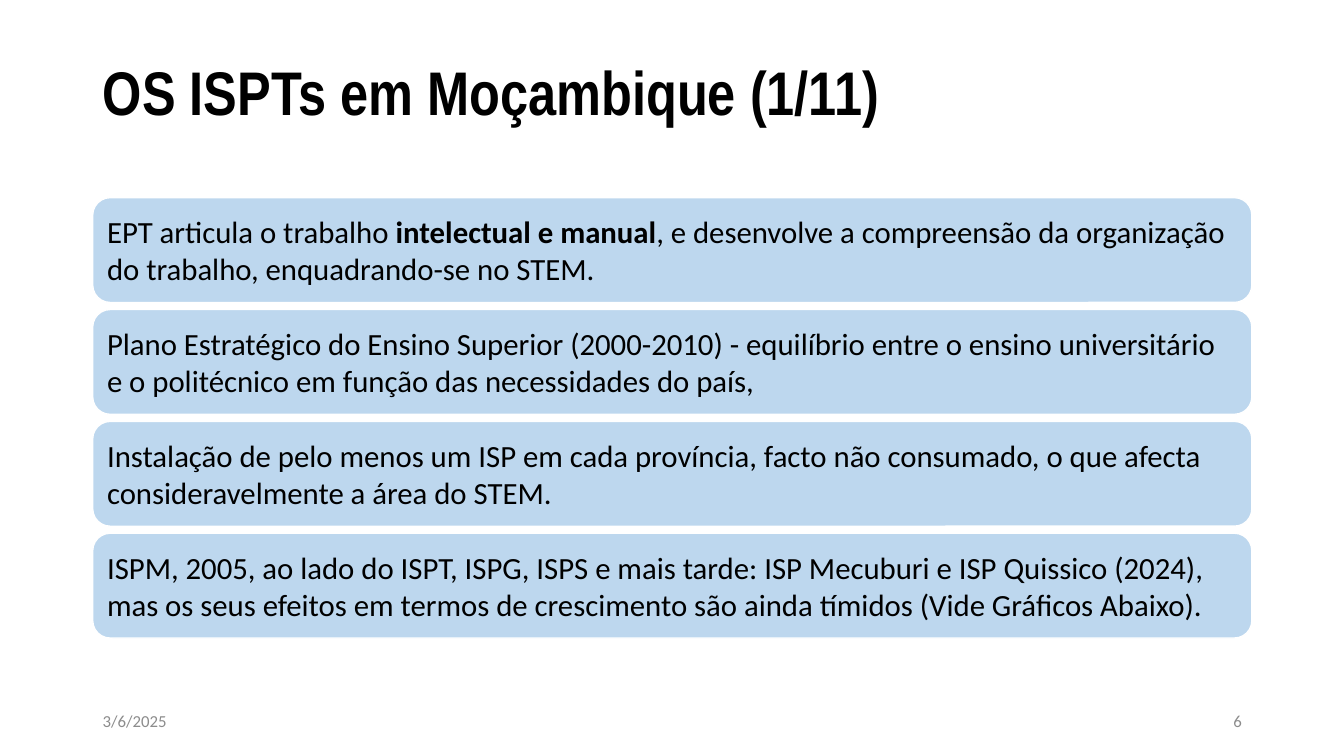
from pptx import Presentation
from pptx.dml.color import RGBColor
from pptx.enum.shapes import MSO_SHAPE as Shape
from pptx.enum.text import MSO_ANCHOR as Anchor, MSO_AUTO_SIZE as AutoSize, PP_ALIGN as Align
from pptx.util import Pt

LEFT, WIDTH = 66.25, 828
CARD_TOP, CARD_HEIGHT, CARD_PITCH = 141.2, 74.9, 79.9
FOOTER_TOP, FOOTER_WIDTH, FOOTER_HEIGHT = 500.5, 216, 28.75
CARDS = [
    [("EPT articula o trabalho ", False), ("intelectual e manual", True),
     (", e desenvolve a compreensão da organização do trabalho, enquadrando-se no STEM.", False)],
    [("Plano Estratégico do Ensino Superior (2000-2010) - equilíbrio entre o ensino "
      "universitário e o politécnico em função das necessidades do país,", False)],
    [("Instalação de pelo menos um ISP em cada província, facto não consumado, o que afecta "
      "consideravelmente a área do STEM.", False)],
    [("ISPM, 2005, ao lado do ISPT, ISPG, ISPS e mais tarde: ISP Mecuburi e ISP Quissico (2024), "
      "mas os seus efeitos em termos de crescimento são ainda tímidos (Vide Gráficos Abaixo).", False)],
]


def color(value):
    """Return the colour for a hex string."""
    return RGBColor.from_string(value)


def format_run(run, size, ink="000000", name="Calibri", bold=False):
    """Set the font of a run."""
    font = run.font
    font.name, font.size, font.bold = name, Pt(size), bold
    font.color.rgb = color(ink)


def add_title(slide, text):
    """Fill and place the title placeholder."""
    title = slide.shapes.title
    title.left, title.top, title.width, title.height = Pt(LEFT), Pt(28.75), Pt(WIDTH), Pt(78.5)
    frame = title.text_frame
    frame.text = text
    frame.auto_size = AutoSize.NONE
    frame.vertical_anchor = Anchor.MIDDLE
    paragraph = frame.paragraphs[0]
    paragraph.alignment = Align.LEFT
    paragraph.line_spacing = 0.9
    format_run(paragraph.runs[0], 44, name="Arial Narrow", bold=True)


def add_card(slide, top, parts):
    """Add a rounded card holding plain and bold text parts."""
    card = slide.shapes.add_shape(Shape.ROUNDED_RECTANGLE, Pt(LEFT), Pt(top), Pt(WIDTH), Pt(CARD_HEIGHT))
    card.shadow.inherit = False
    card.fill.solid()
    card.fill.fore_color.rgb = color("BDD7EE")
    card.line.color.rgb = color("FFFFFF")
    card.line.width = Pt(1)
    frame = card.text_frame
    frame.word_wrap = True
    frame.vertical_anchor = Anchor.MIDDLE
    frame.margin_left = frame.margin_right = frame.margin_top = frame.margin_bottom = Pt(6.6)
    paragraph = frame.paragraphs[0]
    paragraph.alignment = Align.LEFT
    for text, bold in parts:
        run = paragraph.add_run()
        run.text = text
        format_run(run, 22, bold=bold)


def add_footer(slide, left, text, alignment):
    """Add a small grey footer text."""
    box = slide.shapes.add_textbox(Pt(left), Pt(FOOTER_TOP), Pt(FOOTER_WIDTH), Pt(FOOTER_HEIGHT))
    frame = box.text_frame
    frame.text = text
    frame.word_wrap = True
    frame.vertical_anchor = Anchor.MIDDLE
    paragraph = frame.paragraphs[0]
    paragraph.alignment = alignment
    format_run(paragraph.runs[0], 12, "8C8C8C")


def main():
    """Build and save the slide."""
    presentation = Presentation()
    presentation.slide_width, presentation.slide_height = Pt(960), Pt(540)
    slide = presentation.slides.add_slide(presentation.slide_layouts.get_by_name("Title Only"))
    add_title(slide, "OS ISPTs em Moçambique (1/11)")
    for index, parts in enumerate(CARDS):
        add_card(slide, CARD_TOP + index * CARD_PITCH, parts)
    add_footer(slide, LEFT, "3/6/2025", Align.LEFT)
    add_footer(slide, LEFT + WIDTH - FOOTER_WIDTH, "6", Align.RIGHT)
    presentation.save("out.pptx")


if __name__ == "__main__":
    main()
